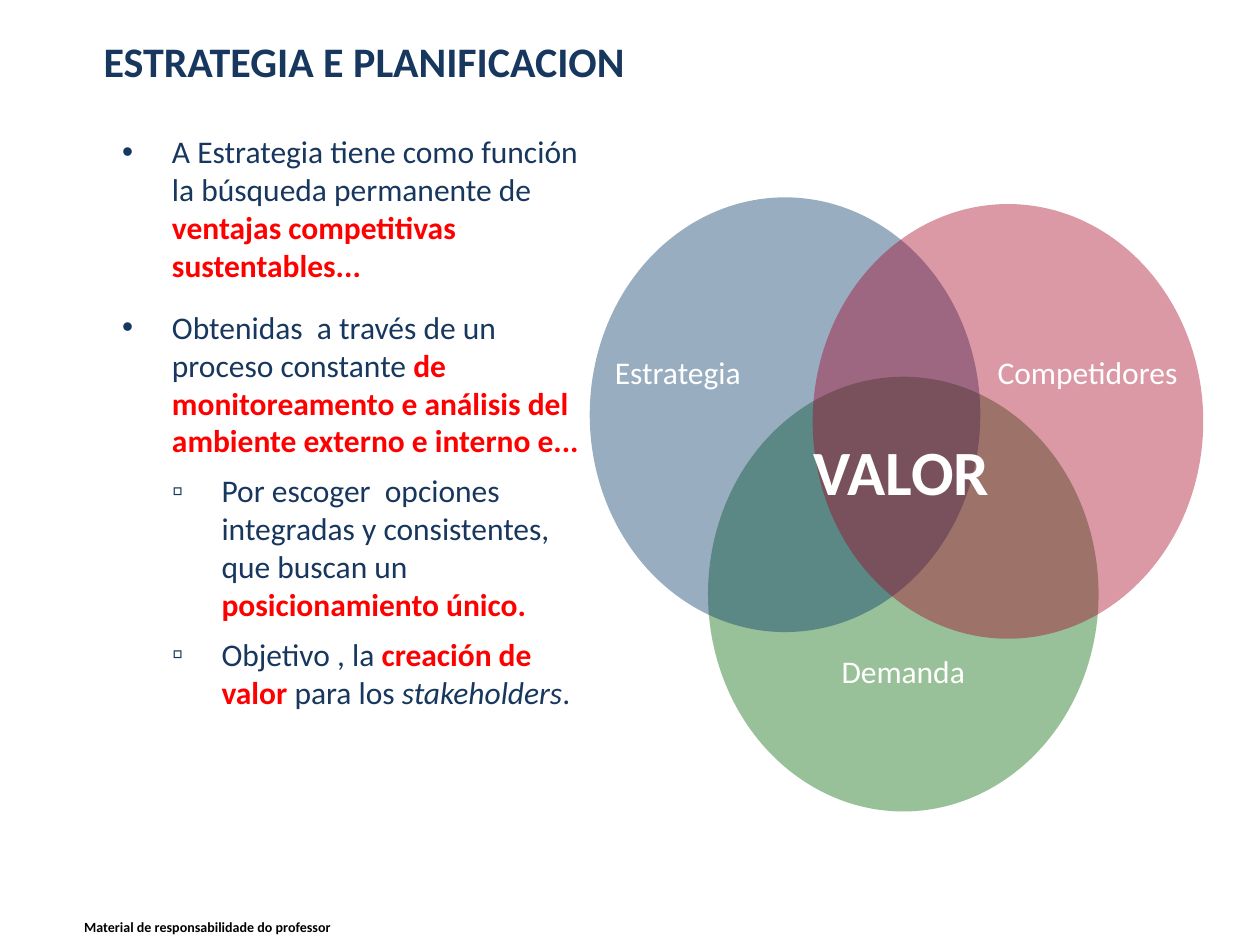
"""Build a strategy slide with a bulleted list and a three-circle Venn diagram."""
from dataclasses import dataclass

from lxml import etree
from pptx import Presentation
from pptx.dml.color import RGBColor
from pptx.enum.shapes import MSO_SHAPE
from pptx.enum.text import MSO_ANCHOR, MSO_AUTO_SIZE, PP_ALIGN
from pptx.oxml.ns import qn
from pptx.util import Pt

OVAL = MSO_SHAPE.OVAL
TOP, MIDDLE = MSO_ANCHOR.TOP, MSO_ANCHOR.MIDDLE
NO_FIT = MSO_AUTO_SIZE.NONE
LEFT, CENTER = PP_ALIGN.LEFT, PP_ALIGN.CENTER


@dataclass(frozen=True)
class Theme:
    font: str = "Calibri"
    navy: str = "17375E"
    red: str = "FF0000"
    white: str = "FFFFFF"
    black: str = "000000"
    strategy: str = "003366"
    rivals: str = "A50021"
    demand: str = "006600"
    title: float = 24
    body: float = 18
    value: float = 36
    footer: float = 8


THEME = Theme()


@dataclass(frozen=True)
class Box:
    x: float
    y: float
    w: float
    h: float


@dataclass(frozen=True)
class Span:
    text: str
    color: str = THEME.navy
    bold: bool = False
    italic: bool = False


@dataclass(frozen=True)
class Bullet:
    level: int
    spans: tuple[Span, ...]


@dataclass(frozen=True)
class BulletStyle:
    char: str
    indent: float
    hang: float
    before: float


@dataclass(frozen=True)
class Circle:
    x: float
    y: float
    color: str
    text: str = ""


@dataclass(frozen=True)
class Label:
    text: str
    box: Box
    size: float = THEME.body
    color: str = THEME.white
    bold: bool = False
    shadow: bool = True
    align: PP_ALIGN = LEFT
    wrap: bool = False


def key(text: str) -> Span:
    """Return a highlighted span."""
    return Span(text, THEME.red, bold=True)


CIRCLE_W, CIRCLE_H = 223.2, 248.4
LABEL_DROP = 44
TITLE_BOX = Box(52, 18.7, 336, 32.4)
BODY_BOX = Box(62.6, 72, 286, 289)
STYLES = (BulletStyle("•", 28.5, 28.5, 14), BulletStyle("▫", 56.8, 28.3, 7))
BULLETS = (
    Bullet(0, (Span("A Estrategia tiene como función la búsqueda permanente de "),
               key("ventajas competitivas sustentables..."))),
    Bullet(0, (Span("Obtenidas  a través de un proceso constante "),
               key("de monitoreamento e análisis del ambiente externo e interno e..."))),
    Bullet(1, (Span("Por escoger  opciones integradas y consistentes, que buscan un "),
               key("posicionamiento único."))),
    Bullet(1, (Span("Objetivo , la "), key("creación de valor "), Span("para los "),
               Span("stakeholders", italic=True), Span("."))),
)
CIRCLES = (
    Circle(404.6, 215.3, THEME.demand, "Demanda"),
    Circle(337, 112.8, THEME.strategy),
    Circle(464.4, 116.6, THEME.rivals),
)
LABELS = (
    Label("Competidores", Box(563, 198, 118.8, 29)),
    Label("Estrategia", Box(344.2, 198, 87, 29)),
    Label("VALOR", Box(457.2, 243.4, 116, 51), size=THEME.value, bold=True, align=CENTER),
    Label("Material de responsabilidade do professor", Box(41, 521.3, 408, 16.6),
          size=THEME.footer, color=THEME.black, bold=True, shadow=False, wrap=True),
)


def add_text(p, text: str, *, size: float, color: str, bold: bool = False,
             italic: bool = False, shadow: bool = False) -> None:
    """Add a formatted run to a paragraph."""
    r = p.add_run()
    r.text = text
    f = r.font
    f.name, f.size, f.bold, f.italic = THEME.font, Pt(size), bold, italic
    f.color.rgb = RGBColor.from_string(color)
    if shadow:
        effects = etree.Element(qn("a:effectLst"))
        outer = etree.SubElement(effects, qn("a:outerShdw"), blurRad="38100",
                                 dist="38100", dir="2700000", algn="tl")
        rgb = etree.SubElement(outer, qn("a:srgbClr"), val=THEME.black)
        etree.SubElement(rgb, qn("a:alpha"), val="43000")
        f.fill._xPr.find(qn("a:solidFill")).addnext(effects)


def place(sp, box: Box) -> None:
    """Move and size a shape."""
    sp.left, sp.top, sp.width, sp.height = Pt(box.x), Pt(box.y), Pt(box.w), Pt(box.h)


def draw_title(sp, text: str) -> None:
    """Fill the title placeholder."""
    place(sp, TITLE_BOX)
    tf = sp.text_frame
    tf.auto_size, tf.word_wrap, tf.vertical_anchor = NO_FIT, False, MIDDLE
    p = tf.paragraphs[0]
    p.alignment = LEFT
    add_text(p, text, size=THEME.title, color=THEME.navy, bold=True)


def draw_bullets(sp, bullets: tuple[Bullet, ...]) -> None:
    """Fill the body placeholder with a two-level list."""
    place(sp, BODY_BOX)
    tf = sp.text_frame
    tf.auto_size, tf.word_wrap, tf.vertical_anchor = NO_FIT, True, TOP
    for i, bullet in enumerate(bullets):
        p = tf.add_paragraph() if i else tf.paragraphs[0]
        style = STYLES[bullet.level]
        p.level = bullet.level
        pPr = p._p.get_or_add_pPr()
        pPr.set("marL", str(Pt(style.indent)))
        pPr.set("indent", str(-Pt(style.hang)))
        etree.SubElement(pPr, qn("a:buFont"), typeface="Arial")
        etree.SubElement(pPr, qn("a:buChar"), char=style.char)
        p.space_before = Pt(style.before if i else 0)
        for span in bullet.spans:
            add_text(p, span.text, size=THEME.body, color=span.color,
                     bold=span.bold, italic=span.italic)


def draw_circle(s, circle: Circle) -> None:
    """Draw a translucent circle with an optional lowered label."""
    sp = s.shapes.add_shape(OVAL, Pt(circle.x), Pt(circle.y), Pt(CIRCLE_W), Pt(CIRCLE_H))
    sp.shadow.inherit = False
    sp.line.fill.background()
    sp.fill.solid()
    sp.fill.fore_color.rgb = RGBColor.from_string(circle.color)
    rgb = sp._element.spPr.find(qn("a:solidFill")).find(qn("a:srgbClr"))
    etree.SubElement(rgb, qn("a:alpha"), val="40000")
    if circle.text:
        tf = sp.text_frame
        tf.word_wrap, tf.vertical_anchor = False, MIDDLE
        tf.margin_top = tf.margin_bottom + Pt(2 * LABEL_DROP)
        p = tf.paragraphs[0]
        p.alignment = CENTER
        add_text(p, circle.text, size=THEME.body, color=THEME.white)


def draw_label(s, label: Label) -> None:
    """Draw a text box."""
    b = label.box
    tf = s.shapes.add_textbox(Pt(b.x), Pt(b.y), Pt(b.w), Pt(b.h)).text_frame
    tf.word_wrap = label.wrap
    p = tf.paragraphs[0]
    p.alignment = label.align
    add_text(p, label.text, size=label.size, color=label.color,
             bold=label.bold, shadow=label.shadow)


def main() -> None:
    """Build and save the slide."""
    prs = Presentation()
    prs.slide_width, prs.slide_height = Pt(720), Pt(540)
    s = prs.slides.add_slide(prs.slide_layouts[1])
    draw_title(s.shapes.title, "ESTRATEGIA E PLANIFICACION")
    draw_bullets(s.placeholders[1], BULLETS)
    for circle in CIRCLES:
        draw_circle(s, circle)
    for label in LABELS:
        draw_label(s, label)
    prs.save("out.pptx")


if __name__ == "__main__":
    main()
